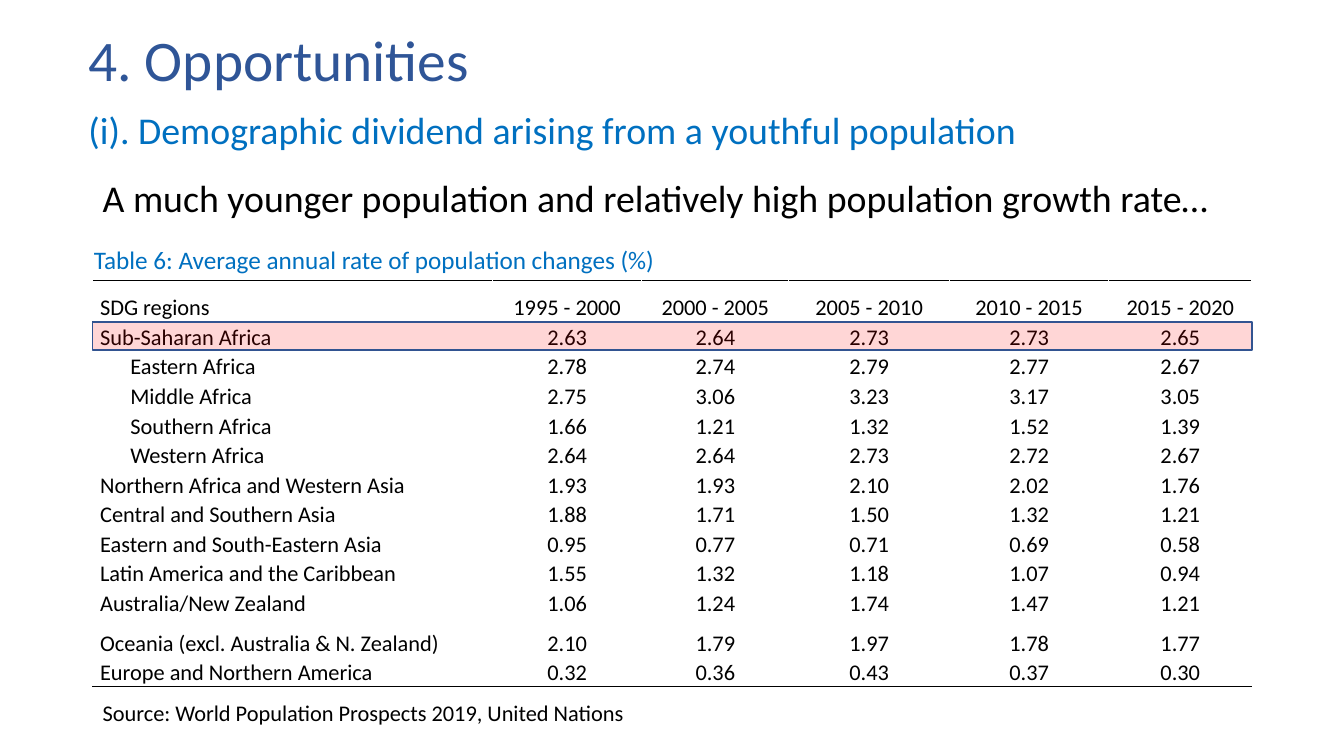
"""Slide on the demographic dividend, with a table of population growth rates by region."""
from lxml.etree import SubElement
from pptx import Presentation
from pptx.dml.color import RGBColor
from pptx.enum.shapes import MSO_SHAPE
from pptx.enum.text import MSO_ANCHOR as ANCHOR, PP_ALIGN as ALIGN
from pptx.oxml import parse_xml
from pptx.oxml.ns import nsdecls, qn
from pptx.util import Pt

PX = 6096
BLACK = RGBColor(0x00, 0x00, 0x00)
BLUE = RGBColor(0x00, 0x70, 0xC0)
NAVY = RGBColor(0x2F, 0x55, 0x97)
RED = RGBColor(0xFF, 0x00, 0x00)
OUTLINE = RGBColor(0x32, 0x54, 0x91)


def write(frame, text, size, color, spacing=1.0):
    paragraph = frame.paragraphs[0]
    paragraph.line_spacing = spacing
    run = paragraph.add_run()
    run.text = text
    run.font.name = "Calibri"
    run.font.size = Pt(size)
    run.font.color.rgb = color
    return paragraph


def rule(cell, edges):
    for position, edge in enumerate(edges):
        cell._tc.get_or_add_tcPr().insert(position, parse_xml(
            f'<a:ln{edge} {nsdecls("a")} w="12700"><a:solidFill>'
            f'<a:srgbClr val="{BLACK}"/></a:solidFill></a:ln{edge}>'))


prs = Presentation()
prs.slide_width, prs.slide_height = 2000 * PX, 1125 * PX
slide = prs.slides.add_slide(prs.slide_layouts[6])

growth_rates = [
    ("SDG regions", "1995 - 2000", "2000 - 2005", "2005 - 2010", "2010 - 2015", "2015 - 2020"),
    ("Sub-Saharan Africa", "2.63", "2.64", "2.73", "2.73", "2.65"),
    ("Eastern Africa", "2.78", "2.74", "2.79", "2.77", "2.67"),
    ("Middle Africa", "2.75", "3.06", "3.23", "3.17", "3.05"),
    ("Southern Africa", "1.66", "1.21", "1.32", "1.52", "1.39"),
    ("Western Africa", "2.64", "2.64", "2.73", "2.72", "2.67"),
    ("Northern Africa and Western Asia", "1.93", "1.93", "2.10", "2.02", "1.76"),
    ("Central and Southern Asia", "1.88", "1.71", "1.50", "1.32", "1.21"),
    ("Eastern and South-Eastern Asia", "0.95", "0.77", "0.71", "0.69", "0.58"),
    ("Latin America and the Caribbean", "1.55", "1.32", "1.18", "1.07", "0.94"),
    ("Australia/New Zealand", "1.06", "1.24", "1.74", "1.47", "1.21"),
    ("Oceania (excl. Australia & N. Zealand)", "2.10", "1.79", "1.97", "1.78", "1.77"),
    ("Europe and Northern America", "0.32", "0.36", "0.43", "0.37", "0.30"),
]
column_widths = [595, 222, 219, 239, 237, 213]
row_heights = [61] + [44] * 10 + [59, 44]
subregions = range(2, 6)
ruled_rows = {0: "TB", 1: "T", len(growth_rates) - 1: "B"}

rates = slide.shapes.add_table(
    len(row_heights), len(column_widths), 138 * PX, 418 * PX,
    sum(column_widths) * PX, sum(row_heights) * PX).table
rates.first_row = False
rates.horz_banding = False
for column, width in zip(rates.columns, column_widths):
    column.width = width * PX
for r, (height, values) in enumerate(zip(row_heights, growth_rates)):
    rates.rows[r].height = height * PX
    for c, value in enumerate(values):
        cell = rates.cell(r, c)
        is_subregion = c == 0 and r in subregions
        cell.margin_left = (56 if is_subregion else 11) * PX
        cell.margin_right = 11 * PX
        cell.margin_top = cell.margin_bottom = 0
        cell.vertical_anchor = ANCHOR.BOTTOM
        cell.fill.background()
        rule(cell, ruled_rows.get(r, ""))
        entry = write(cell.text_frame, value, 16, BLACK, 1.07)
        entry.alignment = ALIGN.CENTER if c else ALIGN.LEFT

captions = [
    ("A much younger population and relatively high population growth rate…",
     138, 252, 1725, 84, 27, BLACK, 1.0, 6, 0, ANCHOR.MIDDLE, True),
    ("Source: World Population Prospects 2019, United Nations",
     138, 1032, 921, 56, 16, BLACK, 1.0, 0, 0, ANCHOR.MIDDLE, True),
    ("Table 6: Average annual rate of population changes (%)",
     125, 353, 894, 62, 18, BLUE, 1.07, 6, 3, ANCHOR.TOP, False),
    ("(i). Demographic dividend arising from a youthful population",
     117, 150, 1725, 84, 27, BLUE, 1.0, 6, 0, ANCHOR.MIDDLE, True),
    ("4. Opportunities",
     117, 38, 1725, 110, 41, NAVY, 0.9, 0, 0, ANCHOR.MIDDLE, True),
]
for text, x, y, width, height, size, color, spacing, before, after, anchor, wrap in captions:
    frame = slide.shapes.add_textbox(x * PX, y * PX, width * PX, height * PX).text_frame
    frame.word_wrap = wrap
    frame.vertical_anchor = anchor
    caption = write(frame, text, size, color, spacing)
    caption.space_before = Pt(before)
    caption.space_after = Pt(after)

highlight = slide.shapes.add_shape(
    MSO_SHAPE.RECTANGLE, 138 * PX, 479 * PX, 1725 * PX, 42 * PX)
highlight.shadow.inherit = False
highlight.fill.solid()
highlight.fill.fore_color.rgb = RED
tint = highlight.element.spPr.find(qn("a:solidFill")).find(qn("a:srgbClr"))
SubElement(tint, qn("a:alpha")).set("val", "16000")
highlight.line.color.rgb = OUTLINE
highlight.line.width = Pt(1)

prs.save("out.pptx")
